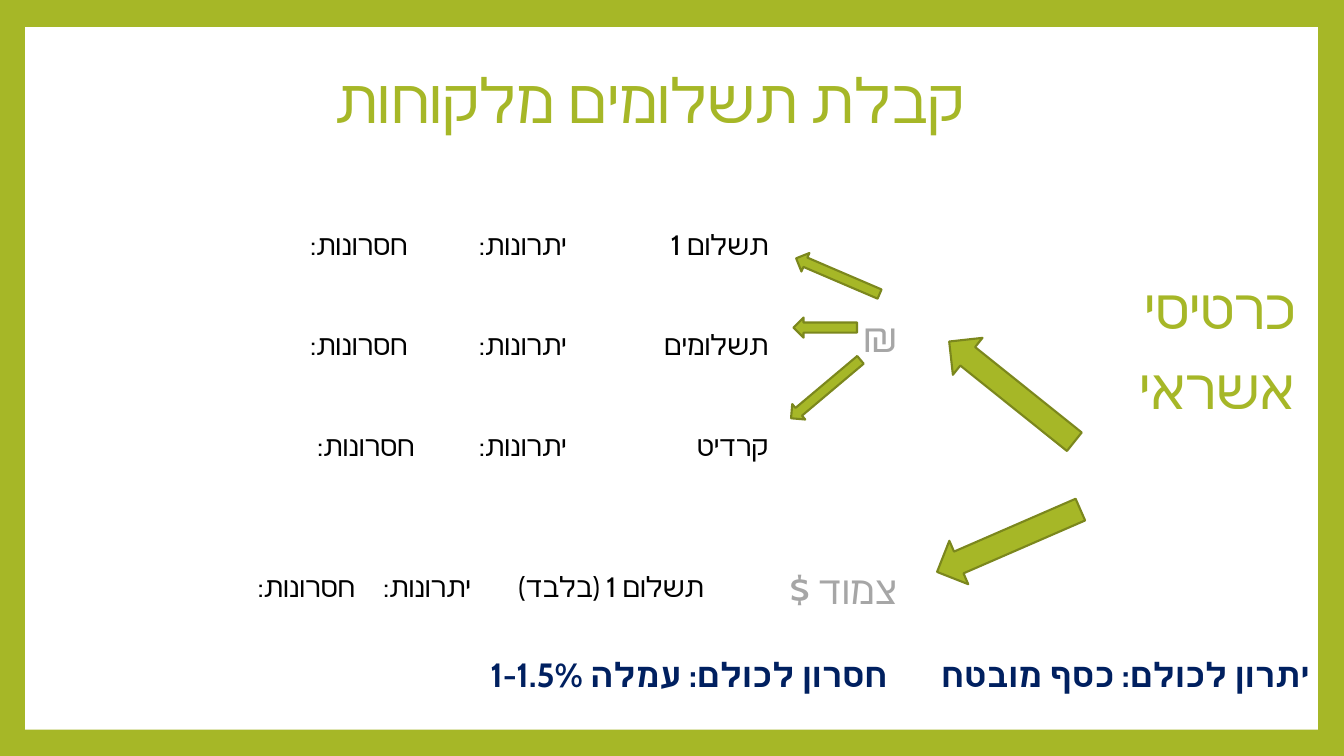
"""Build a one-slide overview of taking card payments from customers."""
from lxml import etree
from pptx import Presentation
from pptx.dml.color import RGBColor
from pptx.enum.shapes import MSO_SHAPE
from pptx.enum.text import MSO_ANCHOR, PP_ALIGN
from pptx.oxml.ns import qn
from pptx.util import Inches, Pt

RECTANGLE, LEFT_ARROW = MSO_SHAPE.RECTANGLE, MSO_SHAPE.LEFT_ARROW
LEFT, RIGHT = PP_ALIGN.LEFT, PP_ALIGN.RIGHT
TOP, MIDDLE = MSO_ANCHOR.TOP, MSO_ANCHOR.MIDDLE

FONT = "Cabin"
GREEN, DARK_GREEN, GREY = "A6B727", "7B871D", "A6A6A6"
NAVY, BLACK, WHITE = "002060", "000000", "FFFFFF"
INSET = 0.1

TITLE = "קבלת תשלומים מלקוחות"
CARDS = ["כרטיסי", "אשראי"]
ADVANTAGES, DISADVANTAGES = "יתרונות:", "חסרונות:"
PAYMENTS = ["תשלום 1", "תשלומים", "קרדיט"]
PAYMENT_RIGHTS = [(7.62, 5.62, 4.04), (7.62, 5.62, 4.04), (7.62, 5.62, 4.11)]
FIRST_ROW, ROW_STEP = 2.42, 1.0
DOLLAR_PAYMENT = "תשלום 1 (בלבד)"
DOLLAR_RIGHTS, DOLLAR_ROW = (6.98, 4.67, 3.52), 5.82
CURRENCIES = [("₪", 8.9, 3.34), ("צמוד $", 8.9, 5.84)]
SUMMARY = [("יתרון לכולם: כסף מובטח", 12.99), ("חסרון לכולם: עמלה 1-1.5%", 8.8)]
SUMMARY_ROW = 6.69
ARROWS = [
    (9.24, 3.65, 1.59, 0.47, 38.7),
    (9.23, 5.13, 1.55, 0.47, 336.5),
    (7.86, 2.64, 0.9, 0.2, 23.2),
    (7.87, 3.15, 0.63, 0.2, 0),
    (7.74, 3.76, 0.9, 0.2, 319.9),
]


def colour(value):
    return RGBColor.from_string(value)


def add_text(slide, lines, box, size, tint, bold=False, align=RIGHT, anchor=MIDDLE, paragraph_format=None):
    frame = slide.shapes.add_textbox(*map(Inches, box)).text_frame
    frame.word_wrap = True
    frame.vertical_anchor = anchor
    for index, line in enumerate(lines):
        paragraph = frame.paragraphs[0] if index == 0 else frame.add_paragraph()
        for name, value in {"alignment": align, **(paragraph_format or {})}.items():
            setattr(paragraph, name, value)
        paragraph._p.get_or_add_pPr().set("rtl", "1")
        run = paragraph.add_run()
        run.text = line
        for name, value in {"name": FONT, "size": Pt(size), "bold": bold}.items():
            setattr(run.font, name, value)
        run.font.color.rgb = colour(tint)
        etree.SubElement(run._r.get_or_add_rPr(), qn("a:cs"), typeface=FONT)


def add_label(slide, text, right, middle, size, tint, bold=False, width=2.4, height=0.5):
    box = (right + INSET - width, middle - height / 2, width, height)
    add_text(slide, [text], box, size, tint, bold)


def add_filled(slide, kind, box, fill):
    shape = slide.shapes.add_shape(kind, *map(Inches, box))
    shape.shadow.inherit = False
    shape.fill.solid()
    shape.fill.fore_color.rgb = colour(fill)
    return shape


def main():
    presentation = Presentation()
    presentation.slide_width, presentation.slide_height = Inches(13.33), Inches(7.5)
    slide = presentation.slides.add_slide(presentation.slide_layouts[6])
    slide.background.fill.solid()
    slide.background.fill.fore_color.rgb = colour(GREEN)
    add_filled(slide, RECTANGLE, (0.25, 0.27, 12.82, 6.97), WHITE).line.fill.background()

    add_text(slide, [TITLE], (3.23, 0.2, 9.33, 1.65), 44, GREEN, align=LEFT,
             paragraph_format={"line_spacing": 0.9})
    add_text(slide, CARDS, (10.1, 2.74, 2.85, 1.7), 40, GREEN, anchor=TOP,
             paragraph_format={"line_spacing": 0.9, "space_before": Pt(14)})

    for text, right, middle in CURRENCIES:
        add_label(slide, text, right, middle, 28, GREY)

    rows = [(payment, rights, FIRST_ROW + index * ROW_STEP)
            for index, (payment, rights) in enumerate(zip(PAYMENTS, PAYMENT_RIGHTS))]
    rows.append((DOLLAR_PAYMENT, DOLLAR_RIGHTS, DOLLAR_ROW))
    for payment, rights, middle in rows:
        for text, right in zip((payment, ADVANTAGES, DISADVANTAGES), rights):
            add_label(slide, text, right, middle, 20, BLACK)

    for text, right in SUMMARY:
        add_label(slide, text, right, SUMMARY_ROW, 24, NAVY, bold=True, width=5)

    for *box, rotation in ARROWS:
        arrow = add_filled(slide, LEFT_ARROW, box, GREEN)
        arrow.rotation = rotation
        arrow.line.color.rgb = colour(DARK_GREEN)
        arrow.line.width = Pt(1.5)

    presentation.save("out.pptx")


if __name__ == "__main__":
    main()
